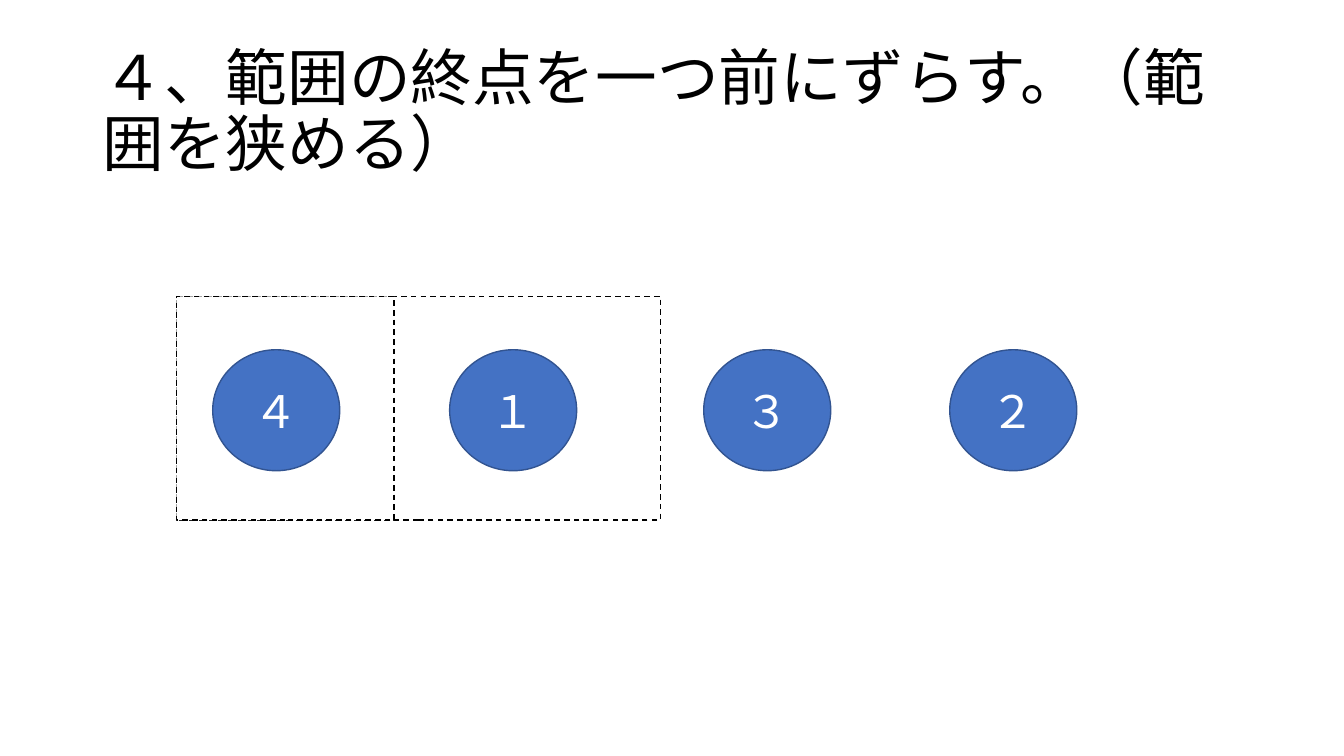
from lxml import etree
from pptx import Presentation
from pptx.dml.color import RGBColor
from pptx.enum.dml import MSO_LINE
from pptx.enum.shapes import MSO_SHAPE as Shape
from pptx.enum.text import MSO_ANCHOR as Anchor, PP_ALIGN as Align
from pptx.oxml.ns import qn
from pptx.util import Inches, Pt

# Content
TITLE = "４、範囲の終点を一つ前にずらす。（範囲を狭める）"
NUMBERS = [("４", 2.11), ("１", 4.46), ("３", 6.98), ("２", 9.42)]  # digit, left
RANGE_WIDTHS = [4.8, 2.16]  # outer range, then the narrowed one

# Style
FONT = "Noto Sans CJK JP"
BLACK = RGBColor(0x00, 0x00, 0x00)
WHITE = RGBColor(0xFF, 0xFF, 0xFF)
BLUE = RGBColor(0x44, 0x72, 0xC4)
DARK_BLUE = RGBColor(0x32, 0x54, 0x91)

# Layout in inches
RANGE_LEFT, RANGE_TOP, RANGE_HEIGHT = 1.75, 2.94, 2.22
CIRCLE_TOP, CIRCLE_WIDTH, CIRCLE_HEIGHT = 3.47, 1.26, 1.2


def write(frame, text, size, color, align):
    frame.word_wrap = True
    frame.vertical_anchor = Anchor.MIDDLE
    paragraph = frame.paragraphs[0]
    paragraph.alignment = align
    run = paragraph.add_run()
    run.text = text
    run.font.size = Pt(size)
    run.font.color.rgb = color
    run.font.name = FONT
    # East Asian characters need their own typeface entry
    etree.SubElement(run.font._element, qn("a:ea"), typeface=FONT)
    return paragraph


def add_outlined(slide, kind, box, fill, line):
    shape = slide.shapes.add_shape(kind, *map(Inches, box))
    shape.shadow.inherit = False
    shape.fill.solid()
    shape.fill.fore_color.rgb = fill
    shape.line.color.rgb = line
    shape.line.width = Pt(1)
    return shape


def main():
    prs = Presentation()
    prs.slide_width, prs.slide_height = Inches(13.33), Inches(7.5)
    slide = prs.slides.add_slide(prs.slide_layouts[6])

    # Dashed ranges
    for width in RANGE_WIDTHS:
        box = (RANGE_LEFT, RANGE_TOP, width, RANGE_HEIGHT)
        search_range = add_outlined(slide, Shape.RECTANGLE, box, WHITE, BLACK)
        search_range.line.dash_style = MSO_LINE.DASH

    # Title
    title = slide.shapes.add_textbox(Inches(0.92), Inches(0.4), Inches(11.5), Inches(1.45))
    write(title.text_frame, TITLE, 44, BLACK, Align.LEFT).line_spacing = 0.9

    # Numbered circles
    for digit, left in NUMBERS:
        box = (left, CIRCLE_TOP, CIRCLE_WIDTH, CIRCLE_HEIGHT)
        circle = add_outlined(slide, Shape.FLOWCHART_CONNECTOR, box, BLUE, DARK_BLUE)
        write(circle.text_frame, digit, 32, WHITE, Align.CENTER)

    prs.save("out.pptx")


if __name__ == "__main__":
    main()
